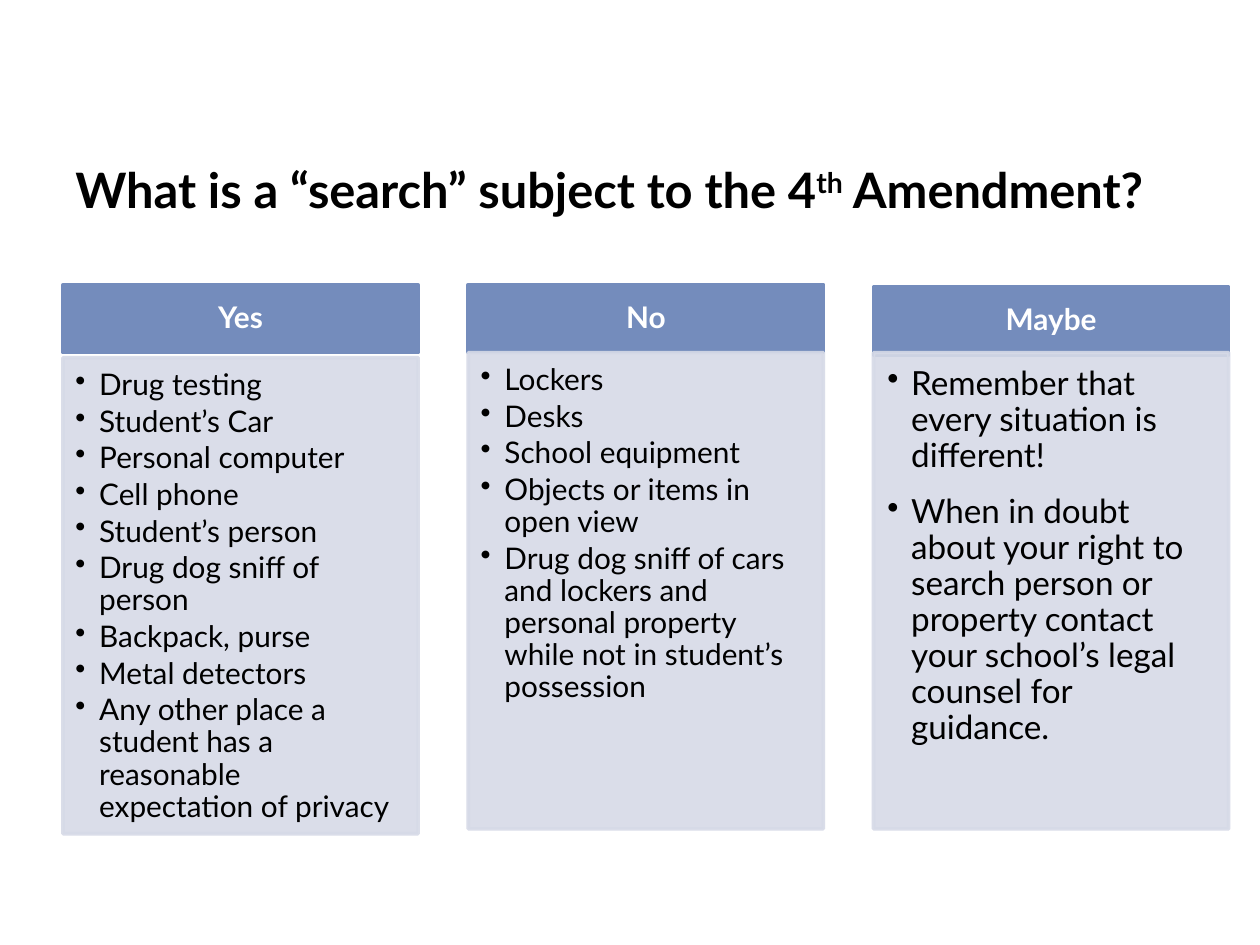
from lxml import etree
from pptx import Presentation
from pptx.dml.color import RGBColor
from pptx.enum.shapes import MSO_SHAPE as Preset
from pptx.enum.text import MSO_ANCHOR as Anchor, PP_ALIGN as Align
from pptx.oxml.ns import qn
from pptx.util import Cm, Pt

HEADER_BLUE = RGBColor(0x74, 0x8C, 0xBC)
BODY_BLUE = RGBColor(0xD6, 0xDA, 0xE7)
WHITE = RGBColor(0xFF, 0xFF, 0xFF)
BLACK = RGBColor(0, 0, 0)
FONT = "Lato"

COLUMN_WIDTH, COLUMN_PITCH = 7.16, 8.17
HEADER_HEIGHT, BODY_HEIGHT = 1.37, 9.6
INDENT = 0.48

# heading, header top, body top, text size, space after, insets, items
COLUMNS = [
    ("Yes", 5.74, 7.21, 17, 2.55, (0.25, 0.25, 0.33, 0.38), [
        "Drug testing", "Student’s Car", "Personal computer", "Cell phone",
        "Student’s person", "Drug dog sniff of person", "Backpack, purse",
        "Metal detectors",
        "Any other place a student has a reasonable expectation of privacy"]),
    ("No", 5.74, 7.11, 17, 2.55, (0.25, 0.25, 0.33, 0.38), [
        "Lockers", "Desks", "School equipment", "Objects or items in open view",
        "Drug dog sniff of cars and lockers and personal property while not "
        "in student’s possession"]),
    ("Maybe", 5.79, 7.11, 19, 12, (0.28, 0.28, 0.38, 0.43), [
        "Remember that every situation is different!",
        "When in doubt about your right to search person or property contact "
        "your school’s legal counsel for guidance."]),
]


def style_span(span, size, color, bold=False):
    font = span.font
    font.name, font.size, font.bold = FONT, Pt(size), bold
    font.color.rgb = color


def set_insets(frame, left, top, right, bottom):
    frame.margin_left, frame.margin_top = Cm(left), Cm(top)
    frame.margin_right, frame.margin_bottom = Cm(right), Cm(bottom)


def add_bullet(para):
    properties = para._p.get_or_add_pPr()
    properties.set("marL", str(Cm(INDENT)))
    properties.set("indent", str(-Cm(INDENT)))
    etree.SubElement(properties, qn("a:buChar"), char="•")


def add_panel(page, left, top, height, color, insets, anchor):
    panel = page.shapes.add_shape(
        Preset.RECTANGLE, Cm(left), Cm(top), Cm(COLUMN_WIDTH), Cm(height))
    panel.shadow.inherit = False
    panel.fill.solid()
    panel.fill.fore_color.rgb = color
    panel.line.color.rgb = color
    panel.line.width = Pt(2.08)
    frame = panel.text_frame
    frame.word_wrap = True
    frame.vertical_anchor = anchor
    set_insets(frame, *insets)
    return panel


def add_header(page, left, top, heading):
    panel = add_panel(page, left, top, HEADER_HEIGHT, HEADER_BLUE,
                      (0.33, 0.2, 0.33, 0.2), Anchor.MIDDLE)
    panel.text_frame.text = heading
    para = panel.text_frame.paragraphs[0]
    para.alignment, para.line_spacing = Align.CENTER, 0.9
    style_span(para.runs[0], 17, WHITE, bold=True)


def add_body(page, left, top, size, space_after, insets, items):
    panel = add_panel(page, left, top, BODY_HEIGHT, BODY_BLUE, insets, Anchor.TOP)
    # Fill and outline are both 90 % opaque
    for color in panel._element.spPr.iter(qn("a:srgbClr")):
        etree.SubElement(color, qn("a:alpha"), val="90000")
    panel.text_frame.text = "\n".join(items)
    for para in panel.text_frame.paragraphs:
        para.alignment, para.line_spacing = Align.LEFT, 0.9
        para.space_after = Pt(space_after)
        add_bullet(para)
        style_span(para.runs[0], size, BLACK)


def add_column(page, left, column):
    heading, header_top, body_top, *body = column
    add_header(page, left, header_top, heading)
    add_body(page, left, body_top, *body)


def add_title(page, left, top, width, height):
    box = page.shapes.add_textbox(Cm(left), Cm(top), Cm(width), Cm(height))
    frame = box.text_frame
    frame.word_wrap = True
    frame.vertical_anchor = Anchor.MIDDLE
    para = frame.paragraphs[0]
    for text in ("What is a “search” subject to the 4", "th", " Amendment?"):
        span = para.add_run()
        span.text = text
        style_span(span, 27.9, BLACK, bold=True)
    # Raise the ordinal ending
    para.runs[1].font._element.set("baseline", "30000")


def main():
    deck = Presentation()
    deck.slide_width, deck.slide_height = Cm(25.4), Cm(19.05)
    page = deck.slides.add_slide(deck.slide_layouts[6])
    for index, column in enumerate(COLUMNS):
        add_column(page, 1.27 + index * COLUMN_PITCH, column)
    add_title(page, 1.27, 2.44, 22.86, 2.74)
    deck.save("out.pptx")


if __name__ == "__main__":
    main()
